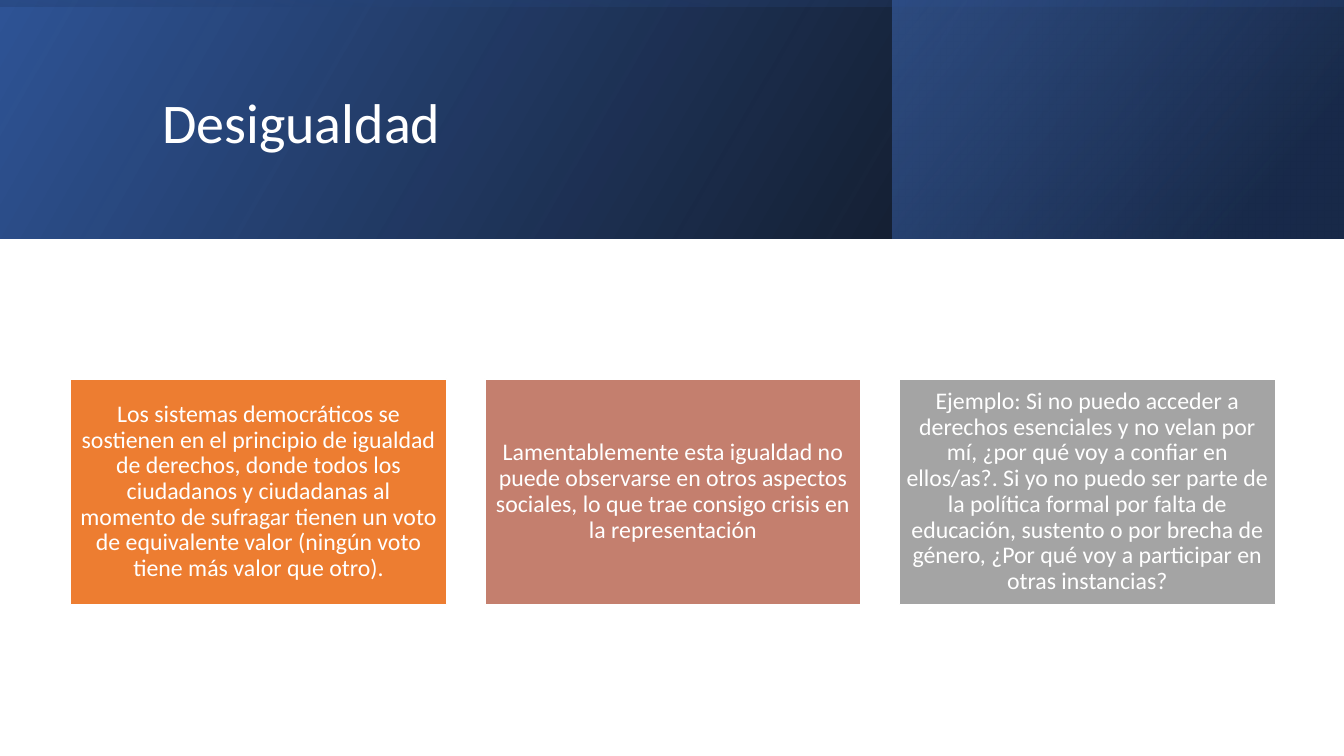
import dataclasses

import lxml.etree
import pptx
import pptx.dml.color
import pptx.enum.shapes
import pptx.enum.text
import pptx.oxml.ns
import pptx.util

Inches = pptx.util.Inches
SLIDE_WIDTH, SLIDE_HEIGHT = 13.33, 7.5


@dataclasses.dataclass(frozen=True)
class Theme:
    """Colours, font and type sizes of the slide."""
    font: str = "Calibri"
    title_size: int = 40
    card_size: int = 17
    white: str = "FFFFFF"
    black: str = "000000"
    blue: str = "2F5496"
    navy: str = "1F3864"
    sky: str = "4472C4"
    cards: tuple = ("ED7D31", "C47F6E", "A4A4A4")


THEME = Theme()

ARGUMENTS = (
    "Los sistemas democráticos se sostienen en el principio de igualdad de derechos, "
    "donde todos los ciudadanos y ciudadanas al momento de sufragar tienen un voto de "
    "equivalente valor (ningún voto tiene más valor que otro).",
    "Lamentablemente esta igualdad no puede observarse en otros aspectos sociales, "
    "lo que trae consigo crisis en la representación",
    "Ejemplo: Si no puedo acceder a derechos esenciales y no velan por mí, ¿por qué voy "
    "a confiar en ellos/as?. Si yo no puedo ser parte de la política formal por falta de "
    "educación, sustento o por brecha de género, ¿Por qué voy a participar en otras "
    "instancias?",
)


def rgb(value):
    """Turn a hex string into a colour."""
    return pptx.dml.color.RGBColor.from_string(value)


def write_text(holder, text, size, align, insets):
    """Fill a shape with one formatted, vertically centred paragraph."""
    frame = holder.text_frame
    frame.word_wrap = True
    frame.auto_size = pptx.enum.text.MSO_AUTO_SIZE.NONE
    frame.vertical_anchor = pptx.enum.text.MSO_ANCHOR.MIDDLE
    frame.margin_left = frame.margin_right = Inches(insets[0])
    frame.margin_top = frame.margin_bottom = Inches(insets[1])
    paragraph = frame.paragraphs[0]
    paragraph.alignment = align
    paragraph.line_spacing = 0.9
    run = paragraph.add_run()
    run.text = text
    run.font.name = THEME.font
    run.font.size = pptx.util.Pt(size)
    run.font.color.rgb = rgb(THEME.white)


def add_rectangle(slide, left, top, width, height):
    """Add a rectangle without a shadow."""
    rectangle = slide.shapes.add_shape(
        pptx.enum.shapes.MSO_SHAPE.RECTANGLE,
        Inches(left), Inches(top), Inches(width), Inches(height))
    rectangle.shadow.inherit = False
    return rectangle


def add_gradient_layer(slide, box, stops, angle, rotation=0):
    """Add a mirrored rectangle with a translucent linear gradient."""
    layer = add_rectangle(slide, *box)
    layer.rotation = rotation
    layer.line.fill.background()
    properties = layer.element.spPr
    properties.find(pptx.oxml.ns.qn("a:xfrm")).set("flipH", "1")
    gradient = lxml.etree.Element(pptx.oxml.ns.qn("a:gradFill"), rotWithShape="1")

    def add_child(parent, tag, **attributes):
        """Append a drawing element to its parent."""
        return lxml.etree.SubElement(parent, pptx.oxml.ns.qn(tag), **attributes)

    stop_list = add_child(gradient, "a:gsLst")
    for position, color, opacity in stops:
        stop = add_child(stop_list, "a:gs", pos=str(position * 1000))
        shade = add_child(stop, "a:srgbClr", val=color)
        add_child(shade, "a:alpha", val=str(opacity * 1000))
    add_child(gradient, "a:lin", ang=str(angle * 60000), scaled="0")
    properties.find(pptx.oxml.ns.qn("a:prstGeom")).addnext(gradient)


def add_banner(slide, left, top, width, height):
    """Layer the banner gradients and set the title over them."""
    panel_width = 4.48
    add_gradient_layer(
        slide, (left, top, width, height),
        ((0, THEME.black, 96), (100, THEME.blue, 100)), 330)
    add_gradient_layer(
        slide, (left + width - panel_width, top, panel_width, height),
        ((0, THEME.navy, 68), (19, THEME.navy, 68), (100, THEME.sky, 48)), 320)
    turn = (width - height) / 2
    add_gradient_layer(
        slide, (left + turn, top - turn, height, width),
        ((0, THEME.blue, 16), (23, THEME.blue, 16),
         (99, THEME.black, 45), (100, THEME.black, 45)), 350, rotation=270)

    title = slide.shapes.title
    title.left, title.top = Inches(left + 1.51), Inches(top + 0.38)
    title.width, title.height = Inches(10.63), Inches(1.72)
    write_text(title, "Desigualdad", THEME.title_size,
               pptx.enum.text.PP_ALIGN.LEFT, (0.1, 0.05))
    slide.shapes.element.append(title.element)


def add_cards(slide, left, top, width, height):
    """Spread the arguments as equal cards across the box."""
    card_width = 3.73
    step = (width - card_width) / (len(ARGUMENTS) - 1)
    for index, (argument, color) in enumerate(zip(ARGUMENTS, THEME.cards)):
        card = add_rectangle(slide, left + index * step, top, card_width, height)
        card.fill.solid()
        card.fill.fore_color.rgb = rgb(color)
        card.line.color.rgb = rgb(THEME.white)
        card.line.width = pptx.util.Pt(1)
        write_text(card, argument, THEME.card_size,
                   pptx.enum.text.PP_ALIGN.CENTER, (0.07, 0.07))


def main():
    """Build and save the slide."""
    deck = pptx.Presentation()
    deck.slide_width, deck.slide_height = Inches(SLIDE_WIDTH), Inches(SLIDE_HEIGHT)
    slide = deck.slides.add_slide(deck.slide_layouts.get_by_name("Title Only"))
    add_banner(slide, 0, 0, SLIDE_WIDTH, 2.37)
    add_cards(slide, 0.7, 3.76, 11.95, 2.24)
    deck.save("out.pptx")


if __name__ == "__main__":
    main()
